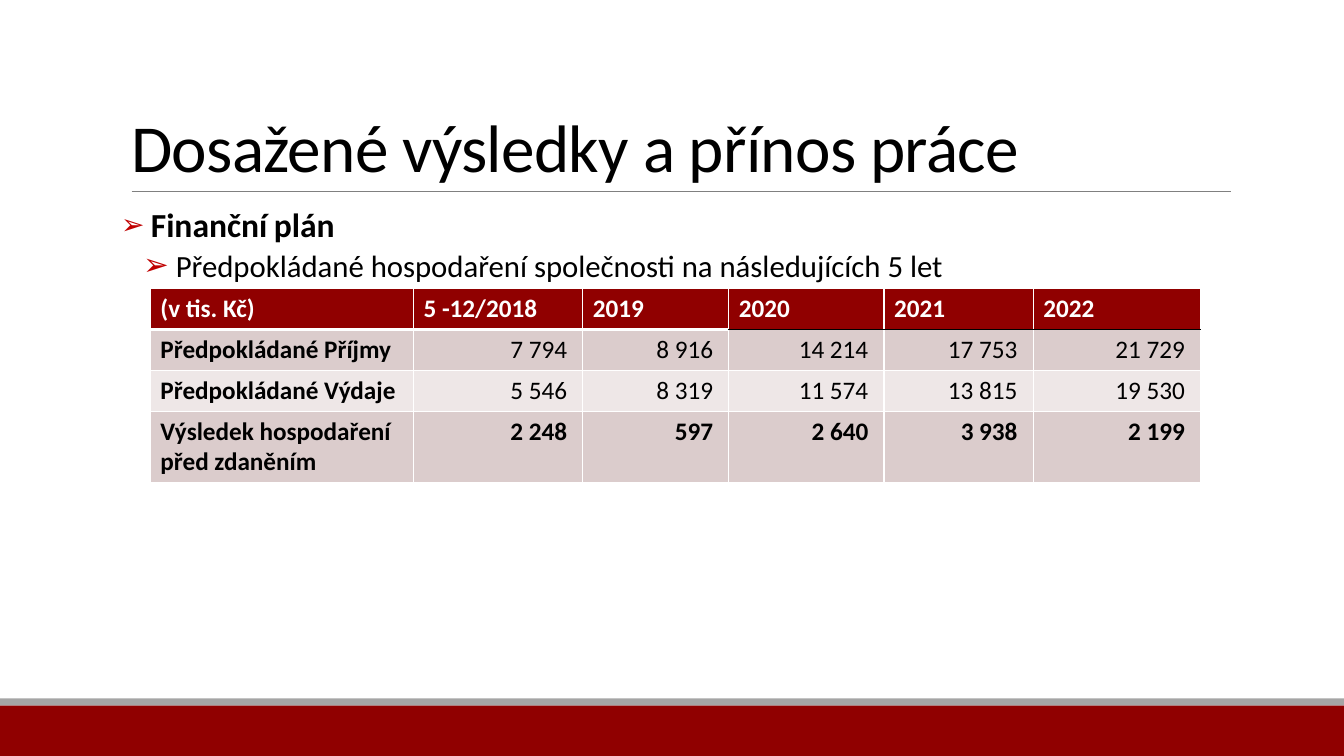
from lxml import etree
from pptx import Presentation
from pptx.dml.color import RGBColor
from pptx.enum.shapes import MSO_CONNECTOR, MSO_SHAPE
from pptx.enum.text import MSO_ANCHOR, MSO_AUTO_SIZE, PP_ALIGN
from pptx.oxml.ns import qn
from pptx.util import Cm, Pt

RECTANGLE = MSO_SHAPE.RECTANGLE
STRAIGHT = MSO_CONNECTOR.STRAIGHT
TOP, BOTTOM = MSO_ANCHOR.TOP, MSO_ANCHOR.BOTTOM
LEFT, RIGHT = PP_ALIGN.LEFT, PP_ALIGN.RIGHT
NO_AUTOFIT = MSO_AUTO_SIZE.NONE

BLACK, WHITE, DARK_RED, BULLET_RED = "000000", "FFFFFF", "900000", "C00000"
BAND_FILLS = ("EEE7E7", "DBCCCC")
COLUMN_WIDTHS = (6.63, 4.27, 3.68, 3.91, 3.76, 4.22)
ROW_HEIGHTS = (1.03, 1.03, 1.03, 1.78)
PLAN = (
    ("(v tis. Kč)", "5 -12/2018", "2019", "2020", "2021", "2022"),
    ("Předpokládané Příjmy", "7 794 ", "8 916 ", "14 214 ", "17 753 ", "21 729 "),
    ("Předpokládané Výdaje", "5 546 ", "8 319 ", "11 574 ", "13 815 ", "19 530 "),
    ("Výsledek hospodaření před zdaněním", "2 248 ", "597 ", "2 640 ", "3 938 ", "2 199 "),
)


def color(value):
    """Turn a hex string into a colour."""
    return RGBColor.from_string(value)


def apply(target, values):
    """Set every attribute named in a dict of format values."""
    for name, value in values.items():
        setattr(target, name, value)


def place(shape, box):
    """Move a shape to a box given in centimetres."""
    apply(shape, dict(zip(("left", "top", "width", "height"), map(Cm, box))))


def add_span(para, text, size, bold=False, fill=BLACK):
    """Add one formatted span of text to a paragraph."""
    span = para.add_run()
    span.text = text
    apply(span.font, {"name": "Calibri", "size": Pt(size), "bold": bold})
    span.font.color.rgb = color(fill)
    return span


def add_bullet(para, margin, indent):
    """Give a paragraph a red arrow bullet with a hanging indent."""
    properties = para._p.get_or_add_pPr()
    properties.set("marL", str(Cm(margin)))
    properties.set("indent", str(Cm(indent)))
    bullet_color = etree.SubElement(properties, qn("a:buClr"))
    etree.SubElement(bullet_color, qn("a:srgbClr"), val=BULLET_RED)
    etree.SubElement(properties, qn("a:buChar"), char="➢")


def add_border(cell, side, value, width):
    """Draw one side of a table cell."""
    line = etree.SubElement(cell._tc.get_or_add_tcPr(), qn(f"a:ln{side}"), w=str(Pt(width)))
    fill = etree.SubElement(line, qn("a:solidFill"))
    etree.SubElement(fill, qn("a:srgbClr"), val=value)


def add_footer_bands(page, box):
    """Draw the grey strip and the red band that fill the box."""
    left, top, width, height = box
    strip = 0.18
    bands = (("A5A5A5", top, strip), (DARK_RED, top + strip, height - strip))
    for fill, band_top, band_height in bands:
        band = page.shapes.add_shape(RECTANGLE, Cm(left), Cm(band_top), Cm(width), Cm(band_height))
        band.shadow.inherit = False
        band.fill.solid()
        band.fill.fore_color.rgb = color(fill)
        band.line.fill.background()


def add_title(page, box):
    """Fill the title placeholder and draw the rule beneath it."""
    left, top, width, height = box
    title = page.shapes.title
    place(title, box)
    apply(title.text_frame, {"vertical_anchor": BOTTOM, "word_wrap": True, "auto_size": NO_AUTOFIT})
    para = title.text_frame.paragraphs[0]
    apply(para, {"alignment": LEFT, "line_spacing": 0.85})
    span = add_span(para, "Dosažené výsledky a přínos práce", 48)
    span.font._element.set("spc", "-50")
    rule_left, rule_top = Cm(left + 0.27), Cm(top + height)
    rule = page.shapes.add_connector(STRAIGHT, rule_left, rule_top, rule_left + Cm(27.69), rule_top)
    rule.line.color.rgb = color("808080")
    rule.line.width = Pt(0.5)
    etree.SubElement(rule._element.spPr, qn("a:effectLst"))


def add_outline(page, box):
    """Fill the body placeholder with the two bulleted lines."""
    body = page.placeholders[1]
    place(body, box)
    frame = body.text_frame
    apply(frame, {"margin_left": 0, "margin_right": 0, "vertical_anchor": TOP,
                  "word_wrap": True, "auto_size": NO_AUTOFIT})
    heading, detail = frame.paragraphs[0], frame.add_paragraph()
    apply(heading, {"line_spacing": 0.9, "space_before": Pt(12), "space_after": Pt(2)})
    apply(detail, {"level": 1, "line_spacing": 0.9, "space_before": Pt(2), "space_after": Pt(4)})
    add_bullet(heading, 0.25, -0.25)
    add_bullet(detail, 1.07, -0.51)
    add_span(heading, " ", 20)
    add_span(heading, "Finanční", 24, True)
    add_span(heading, " ", 20, True)
    add_span(heading, "plán", 24, True)
    add_span(detail, " ", 22)
    add_span(detail, "Předpokládané hospodaření společnosti na následujících 5 let", 22)


def add_plan_table(page, box):
    """Build the financial plan table in the box."""
    frame = page.shapes.add_table(len(PLAN), len(PLAN[0]), *map(Cm, box))
    table = frame.table
    for column, width in zip(table.columns, COLUMN_WIDTHS):
        column.width = Cm(width)
    for row, height in zip(table.rows, ROW_HEIGHTS):
        row.height = Cm(height)
    last_row = len(PLAN) - 1
    for r, texts in enumerate(PLAN):
        for c, text in enumerate(texts):
            cell = table.cell(r, c)
            header_edge = (BLACK, 1) if c > 2 else (WHITE, 3)
            borders = {"L": (WHITE, 1), "R": (WHITE, 1),
                       "T": header_edge if r == 1 else (WHITE, 1),
                       "B": header_edge if r == 0 else (WHITE, 1)}
            for side, (value, width) in borders.items():
                add_border(cell, side, value, width)
            cell.fill.solid()
            cell.fill.fore_color.rgb = color(BAND_FILLS[r % 2] if r else DARK_RED)
            para = cell.text_frame.paragraphs[0]
            para.alignment = RIGHT if r and c else LEFT
            bold = r in (0, last_row) or c == 0
            add_span(para, text, 18, bold, BLACK if r else WHITE)


def main():
    """Build and save the deck."""
    deck = Presentation()
    apply(deck, {"slide_width": Cm(33.87), "slide_height": Cm(19.05)})
    page = deck.slides.add_slide(deck.slide_layouts[1])
    add_footer_bands(page, (0, 17.6, 33.87, 1.45))
    add_title(page, (3.05, 0.79, 27.94, 4.03))
    add_outline(page, (3.05, 5.13, 22.68, 11.18))
    add_plan_table(page, (3.79, 7.27, sum(COLUMN_WIDTHS), sum(ROW_HEIGHTS)))
    deck.save("out.pptx")


if __name__ == "__main__":
    main()
